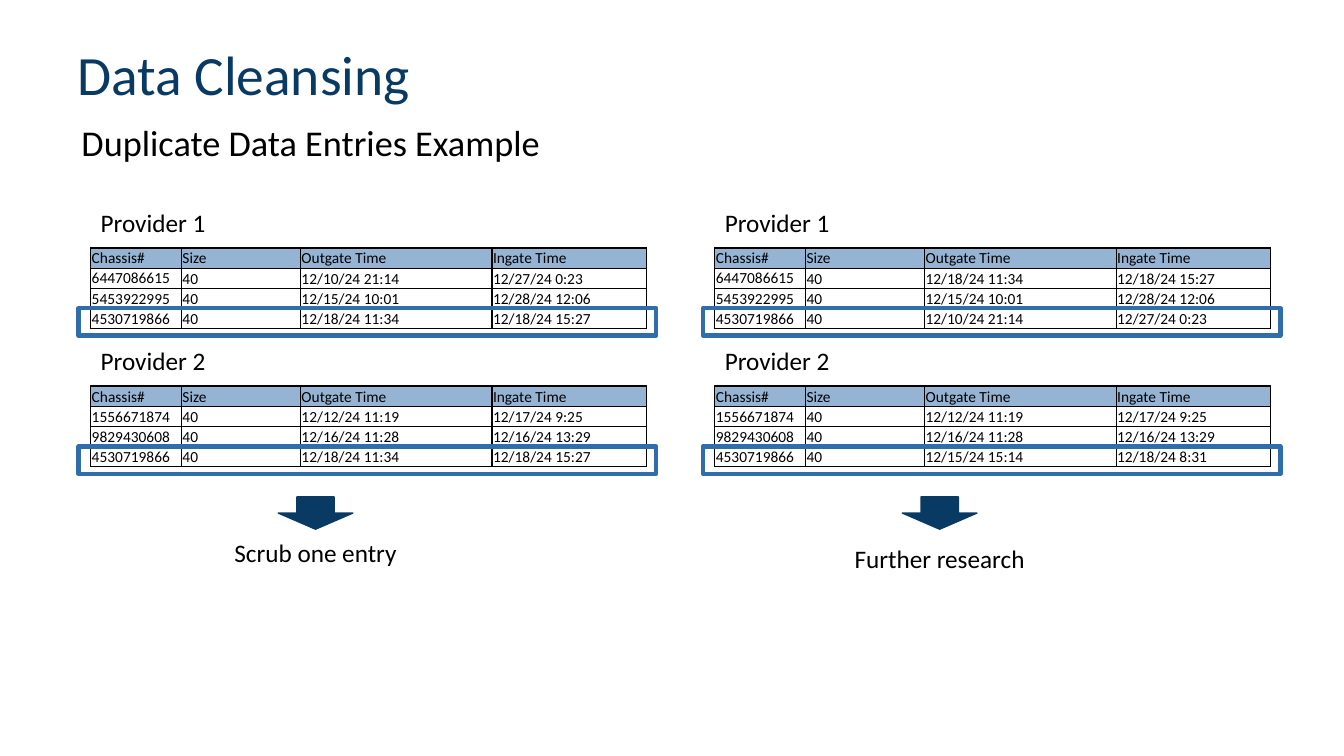
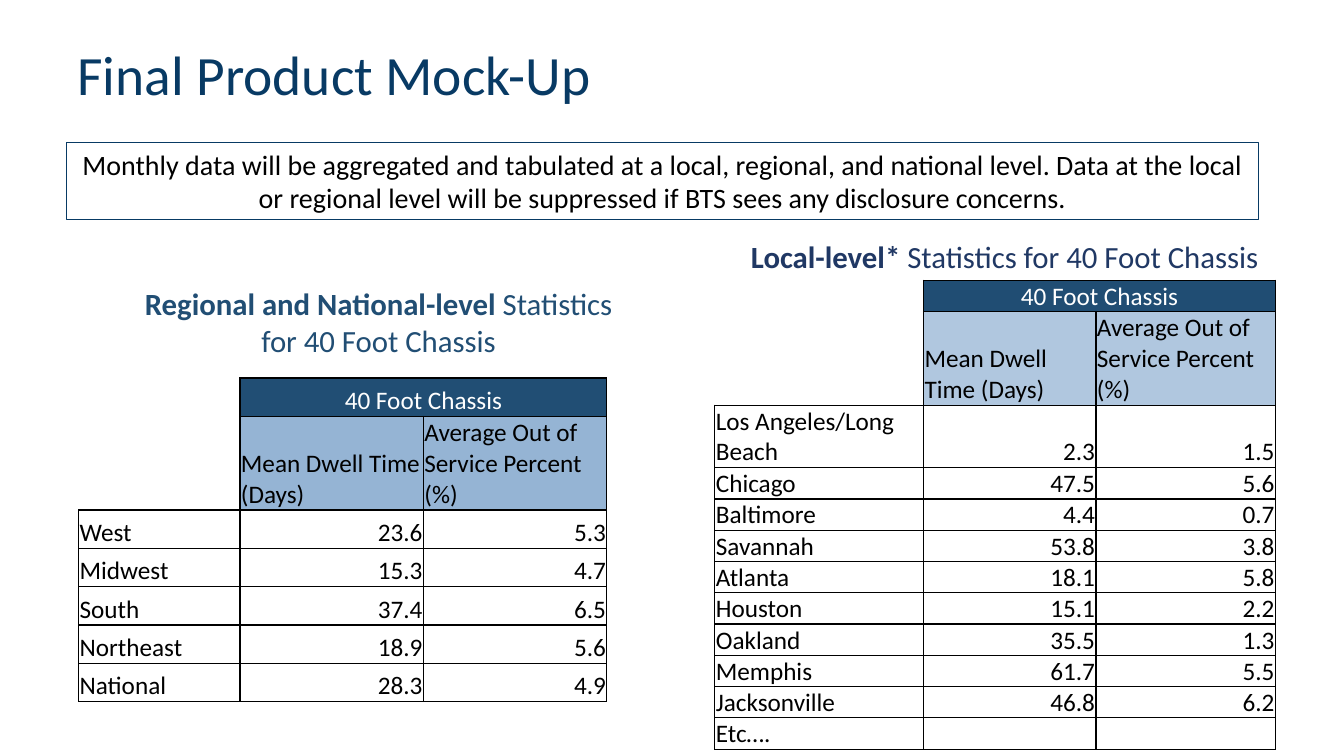
"""Build two slides on chassis data: duplicate entries and a product mock-up."""
from lxml import etree
from pptx import Presentation
from pptx.dml.color import RGBColor
from pptx.enum.shapes import MSO_SHAPE
from pptx.enum.text import MSO_ANCHOR, MSO_AUTO_SIZE, PP_ALIGN
from pptx.oxml.ns import qn
from pptx.util import Inches, Pt

RECTANGLE, DOWN_ARROW = MSO_SHAPE.RECTANGLE, MSO_SHAPE.DOWN_ARROW
TOP, MIDDLE, BOTTOM = MSO_ANCHOR.TOP, MSO_ANCHOR.MIDDLE, MSO_ANCHOR.BOTTOM
LEFT, CENTER, RIGHT = PP_ALIGN.LEFT, PP_ALIGN.CENTER, PP_ALIGN.RIGHT
FIT_SHAPE = MSO_AUTO_SIZE.SHAPE_TO_FIT_TEXT

FONT = "Calibri"
COLORS = {
    "navy": "083A64", "steel": "214E74", "indigo": "203864", "highlight": "306DAB",
    "header": "95B4D4", "black": "000000", "white": "FFFFFF",
}

ENTRY_HEADER = ("Chassis#", "Size", "Outgate Time", "Ingate Time")
ENTRY_WIDTHS = (0.9, 1.18, 1.9, 1.53)
ENTRY_ROW = 0.2
ENTRY_TOP, PROVIDER_PITCH = 2.46, 1.37
CASE_LEFT, CASE_PITCH = 0.9, 6.19

PROVIDER_2_START = [
    ("1556671874", "40", "12/12/24 11:19", "12/17/24 9:25"),
    ("9829430608", "40", "12/16/24 11:28", "12/16/24 13:29"),
]
CASES = [
    {
        "outcome": "Scrub one entry",
        "outcome_top": 5.28,
        "providers": [
            [("6447086615", "40", "12/10/24 21:14", "12/27/24 0:23"),
             ("5453922995", "40", "12/15/24 10:01", "12/28/24 12:06"),
             ("4530719866", "40", "12/18/24 11:34", "12/18/24 15:27")],
            PROVIDER_2_START + [("4530719866", "40", "12/18/24 11:34", "12/18/24 15:27")],
        ],
    },
    {
        "outcome": "Further research",
        "outcome_top": 5.34,
        "providers": [
            [("6447086615", "40", "12/18/24 11:34", "12/18/24 15:27"),
             ("5453922995", "40", "12/15/24 10:01", "12/28/24 12:06"),
             ("4530719866", "40", "12/10/24 21:14", "12/27/24 0:23")],
            PROVIDER_2_START + [("4530719866", "40", "12/15/24 15:14", "12/18/24 8:31")],
        ],
    },
]

STATEMENT = ("Monthly data will be aggregated and tabulated at a local, regional, and national "
             "level. Data at the local or regional level will be suppressed if BTS sees any "
             "disclosure concerns.")
STATISTICS_HEADER = [
    ("", "40 Foot Chassis", ""),
    ("", "Mean Dwell Time (Days)", "Average Out of Service Percent (%)"),
]
LOCAL = {
    "at": (7.09, 2.78),
    "widths": (2.07, 1.71, 1.78),
    "heights": [0.31, 0.93, 0.62] + [0.31] * 9,
    "fills": (("navy", 90), ("header", 74)),
    "rows": [
        ("Los Angeles/Long Beach", "2.3", "1.5"), ("Chicago", "47.5", "5.6"),
        ("Baltimore", "4.4", "0.7"), ("Savannah", "53.8", "3.8"),
        ("Atlanta", "18.1", "5.8"), ("Houston", "15.1", "2.2"),
        ("Oakland", "35.5", "1.3"), ("Memphis", "61.7", "5.5"),
        ("Jacksonville", "46.8", "6.2"), ("Etc….", "", ""),
    ],
    "caption_at": (7.35, 2.31, 5.29, 0.47),
    "caption": [[("Local-level* ", True), ("Statistics for 40 Foot Chassis", False)]],
    "caption_color": "indigo",
    "caption_align": LEFT,
}
REGIONAL = {
    "at": (0.78, 3.75),
    "widths": (1.6, 1.82, 1.82),
    "heights": [0.38, 0.93] + [0.38] * 5,
    "fills": (("steel", 100), ("header", 100)),
    "rows": [
        ("West", "23.6", "5.3"), ("Midwest", "15.3", "4.7"), ("South", "37.4", "6.5"),
        ("Northeast", "18.9", "5.6"), ("National", "28.3", "4.9"),
    ],
    "caption_at": (0.42, 2.78, 6.67, 0.84),
    "caption": [[("Regional and National-level ", True), ("Statistics", False)],
                [("for 40 Foot Chassis", False)]],
    "caption_color": "steel",
    "caption_align": CENTER,
}


def rgb(name):
    return RGBColor.from_string(COLORS[name])


def style_paragraph(paragraph, size, color, align=LEFT):
    paragraph.alignment = align
    font = paragraph.font
    font.name, font.size = FONT, Pt(size)
    font.color.rgb = rgb(color)


def write(frame, paragraphs, size, color="black", align=LEFT):
    frame.word_wrap = True
    for index, runs in enumerate(paragraphs):
        paragraph = frame.add_paragraph() if index else frame.paragraphs[0]
        for text, bold in runs:
            run = paragraph.add_run()
            run.text = text
            if bold:
                run.font.bold = True
        style_paragraph(paragraph, size, color, align)


def add_text(slide, at, paragraphs, size, color="black", align=LEFT, anchor=TOP, fit=True):
    if isinstance(paragraphs, str):
        paragraphs = [[(paragraphs, False)]]
    box = slide.shapes.add_textbox(*map(Inches, at))
    write(box.text_frame, paragraphs, size, color, align)
    box.text_frame.vertical_anchor = anchor
    if fit:
        box.text_frame.auto_size = FIT_SHAPE
    return box


def add_shape(slide, kind, at, line, width, fill=None):
    shape = slide.shapes.add_shape(kind, *map(Inches, at))
    shape.shadow.inherit = False
    if fill:
        shape.fill.solid()
        shape.fill.fore_color.rgb = rgb(fill)
    else:
        shape.fill.background()
    shape.line.color.rgb = rgb(line)
    shape.line.width = Pt(width)
    return shape


def set_borders(cell, sides):
    properties = cell._tc.get_or_add_tcPr()
    for side in "LRTB":
        line = etree.SubElement(properties, qn(f"a:ln{side}"), w=str(Pt(1)))
        if side in sides:
            fill = etree.SubElement(line, qn("a:solidFill"))
            etree.SubElement(fill, qn("a:srgbClr"), val=COLORS["black"])
        else:
            etree.SubElement(line, qn("a:noFill"))


def fill_cell(cell, fill):
    if not fill:
        cell.fill.background()
        return
    color, opacity = fill
    cell.fill.solid()
    cell.fill.fore_color.rgb = rgb(color)
    if opacity < 100:
        value = cell._tc.tcPr.find(f".//{qn('a:solidFill')}/{qn('a:srgbClr')}[last()]")
        value = cell._tc.tcPr.find(qn("a:solidFill")).find(qn("a:srgbClr"))
        etree.SubElement(value, qn("a:alpha"), val=str(opacity * 1000))


def add_grid(slide, at, widths, heights, rows, size, cell_style):
    frame = slide.shapes.add_table(len(rows), len(widths), *map(Inches, at),
                                   Inches(sum(widths)), Inches(sum(heights)))
    table = frame.table
    table.first_row = table.horz_banding = False
    for column, width in zip(table.columns, widths):
        column.width = Inches(width)
    for row, height in zip(table.rows, heights):
        row.height = Inches(height)
    for row_index, row in enumerate(rows):
        for column_index, text in enumerate(row):
            cell = table.cell(row_index, column_index)
            style = {"sides": "LRTB", "fill": None, "color": "black", "align": LEFT,
                     "anchor": BOTTOM, **cell_style(row_index, column_index)}
            cell.margin_left = cell.margin_right = cell.margin_top = Inches(0.01)
            cell.margin_bottom = 0
            cell.vertical_anchor = style["anchor"]
            cell.text = text
            style_paragraph(cell.text_frame.paragraphs[0], size, style["color"], style["align"])
            set_borders(cell, style["sides"])
            fill_cell(cell, style["fill"])
    return table


def entry_style(row, column):
    if row == 0:
        return {"fill": ("header", 100)}
    return {"anchor": MIDDLE} if column == 0 else {}


def add_statistics(slide, data):
    def statistics_style(row, column):
        if row > 1:
            return {"align": RIGHT if column else LEFT}
        if column == 0:
            return {"sides": "RB" if row else "R"}
        style = {"fill": data["fills"][row]}
        if row == 0:
            style.update(color="white", align=CENTER)
        return style

    table = add_grid(slide, data["at"], data["widths"], data["heights"],
                     STATISTICS_HEADER + data["rows"], 18, statistics_style)
    table.cell(0, 1).merge(table.cell(0, 2))
    add_text(slide, data["caption_at"], data["caption"], 22,
             data["caption_color"], data["caption_align"])


def add_case(slide, left, case):
    for index, entries in enumerate(case["providers"]):
        top = ENTRY_TOP + index * PROVIDER_PITCH
        rows = [ENTRY_HEADER] + entries
        add_grid(slide, (left, top), ENTRY_WIDTHS, [ENTRY_ROW] * len(rows), rows, 11, entry_style)
        add_text(slide, (left, top - 0.45, 4.14, 0.4), f"Provider {index + 1}", 18)
        add_shape(slide, RECTANGLE, (left - 0.12, top + 0.6, 5.73, 0.27), "highlight", 3)
    center = left + 2.23
    add_shape(slide, DOWN_ARROW, (center - 0.37, 4.93, 0.74, 0.32), "navy", 1, "navy")
    add_text(slide, (center - 0.97, case["outcome_top"], 1.94, 0.4), case["outcome"], 18,
             align=CENTER)


def add_slide(presentation, title):
    slide = presentation.slides.add_slide(presentation.slide_layouts[6])
    box = add_text(slide, (0.67, 0.53, 10.46, 0.47), title, 39.6, "navy", anchor=MIDDLE, fit=False)
    box.text_frame.paragraphs[0].line_spacing = 0.9
    return slide


def main():
    presentation = Presentation()
    presentation.slide_width, presentation.slide_height = Inches(13.33), Inches(7.5)

    cleansing = add_slide(presentation, "Data Cleansing")
    subtitle = add_text(cleansing, (0.71, 1.23, 11.76, 0.47), "Duplicate Data Entries Example",
                        25.9, fit=False)
    subtitle.text_frame.paragraphs[0].line_spacing = 0.8
    for index, case in enumerate(CASES):
        add_case(cleansing, CASE_LEFT + index * CASE_PITCH, case)

    mockup = add_slide(presentation, "Final Product Mock-Up")
    for data in (LOCAL, REGIONAL):
        add_statistics(mockup, data)
    statement = add_shape(mockup, RECTANGLE, (0.66, 1.41, 11.82, 0.77), "navy", 0.75)
    write(statement.text_frame, [[(STATEMENT, False)]], 20, align=CENTER)

    presentation.save("out.pptx")


if __name__ == "__main__":
    main()
